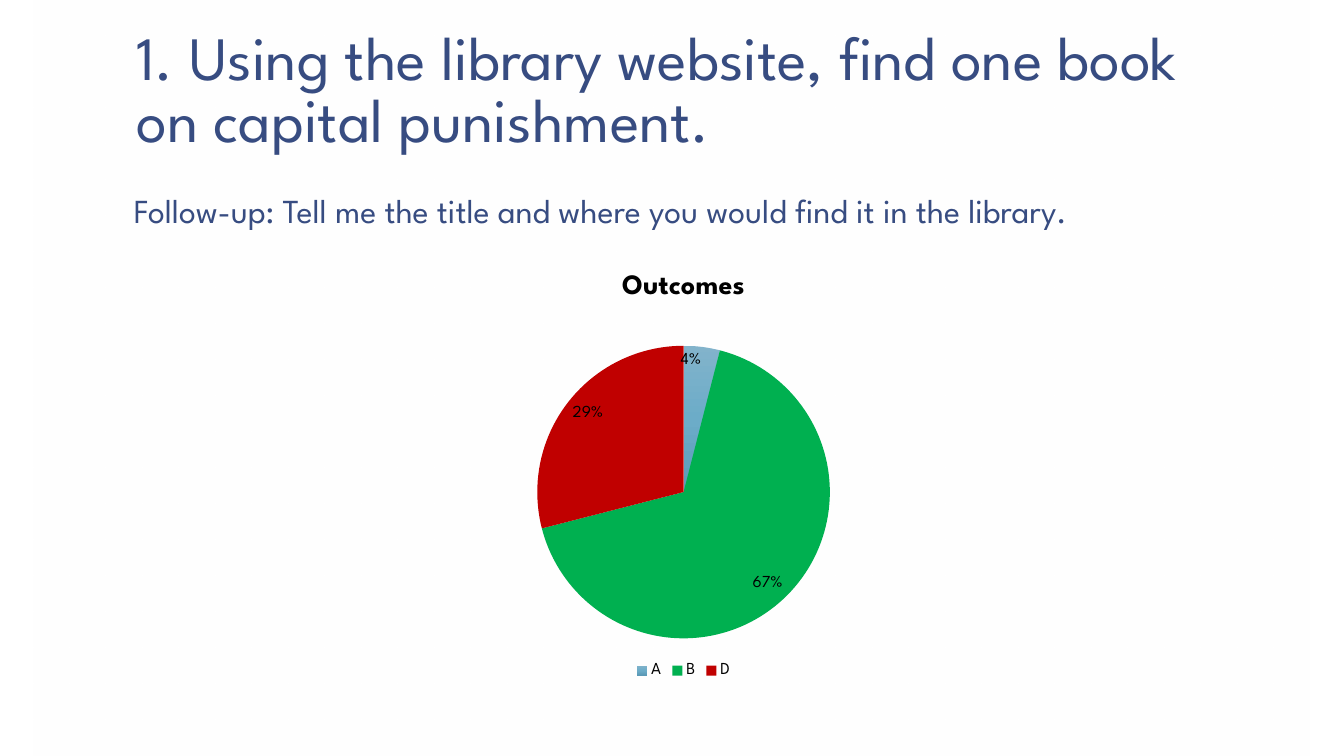
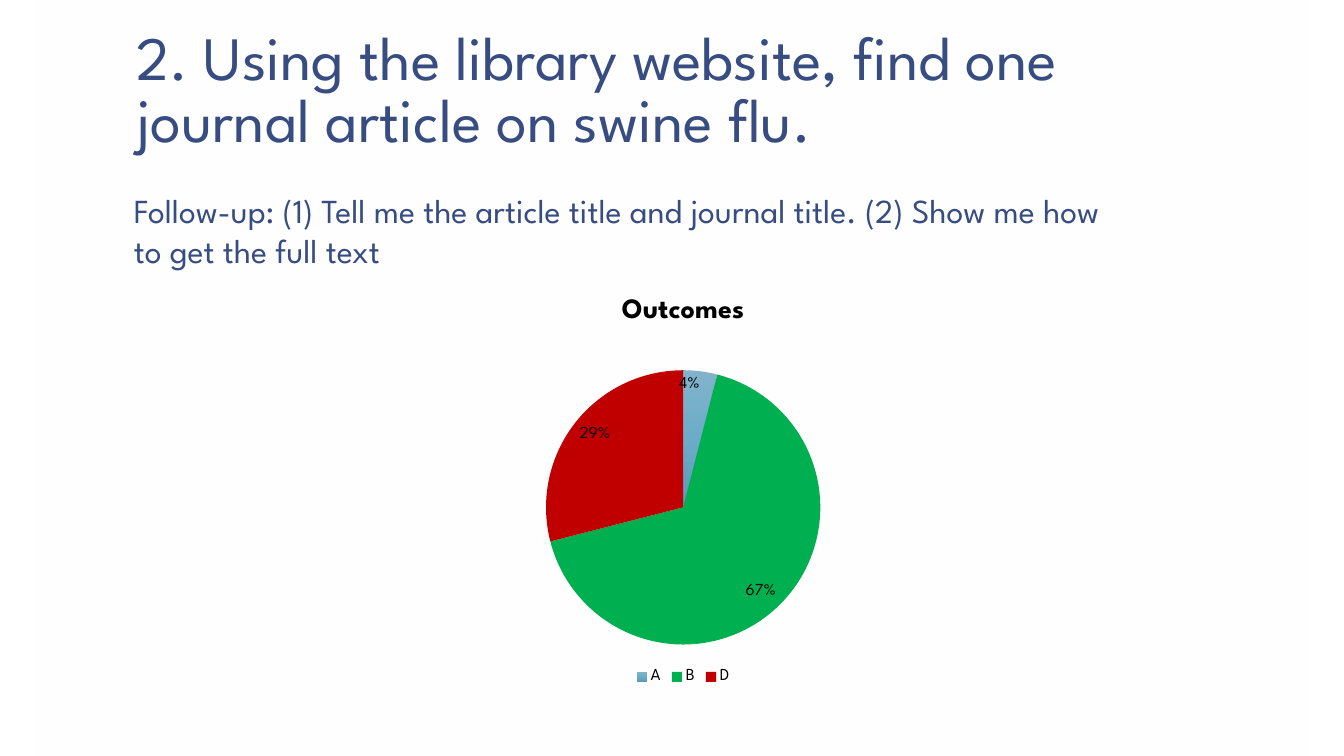
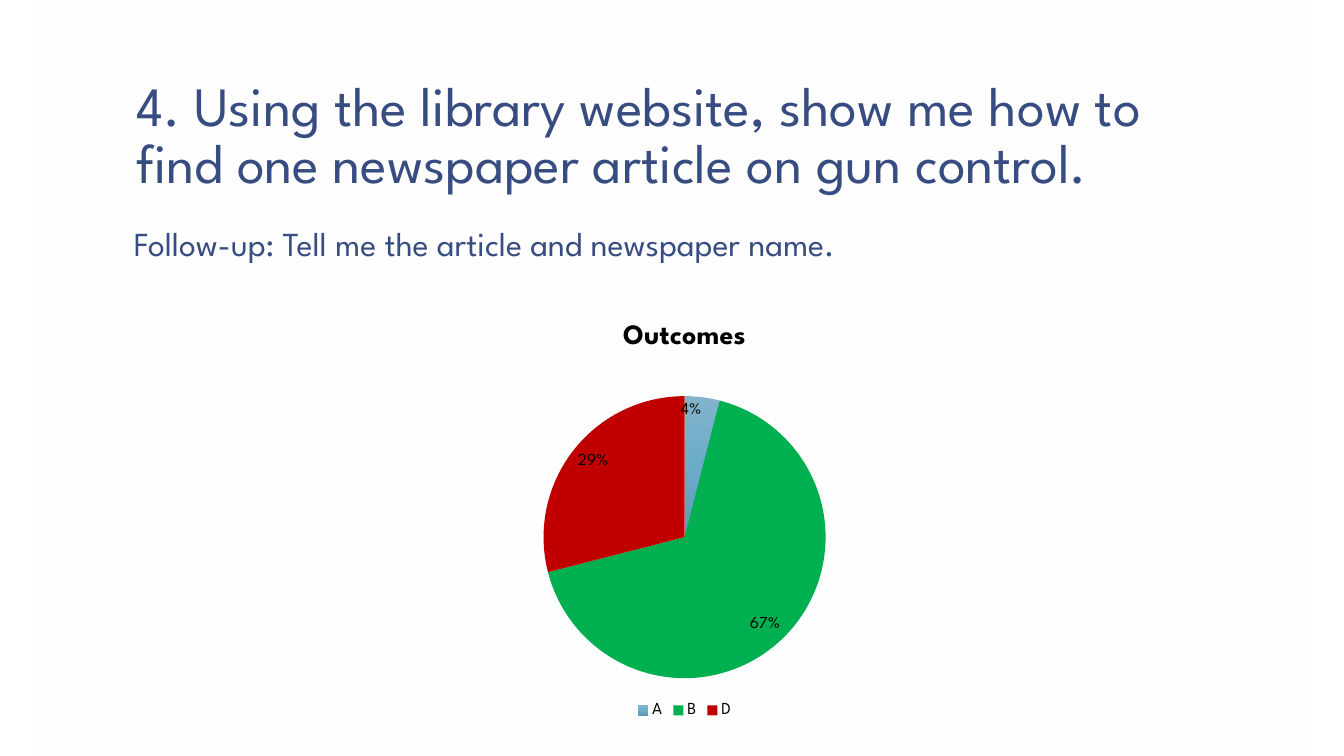
from dataclasses import dataclass

from pptx import Presentation
from pptx.chart.data import CategoryChartData
from pptx.dml.color import RGBColor
from pptx.enum.chart import XL_CHART_TYPE, XL_LABEL_POSITION, XL_LEGEND_POSITION
from pptx.enum.shapes import MSO_SHAPE
from pptx.enum.text import MSO_ANCHOR, MSO_AUTO_SIZE
from pptx.oxml import parse_xml
from pptx.oxml.ns import nsdecls
from pptx.util import Pt


@dataclass(frozen=True)
class Theme:
    font: str = "League Spartan"
    text: str = "374C81"
    chart_text: str = "000000"
    panel_stops: tuple = ((0, "FFFFFF", 100), (100, "FFFFFF", 45))
    slice_stops: tuple = ((0, "82B3CB", 100), (50, "6CACC8", 100), (100, "5B9AB7", 100))
    slice_colors: tuple = ("00B050", "C00000")
    title_size: float = 44
    follow_up_size: float = 24
    chart_title_size: float = 20
    label_size: float = 12
    line_spacing: float = 0.85


class Deck:
    def __init__(self, theme):
        self.theme = theme
        self.presentation = Presentation()
        self.presentation.slide_width = Pt(960)
        self.presentation.slide_height = Pt(540)
        self.slide = None

    def add_slide(self):
        self.slide = self.presentation.slides.add_slide(self.presentation.slide_layouts[6])
        self.add_panel()

    def add_panel(self):
        panel = self.slide.shapes.add_shape(MSO_SHAPE.RECTANGLE, Pt(24), Pt(0), Pt(911.5), Pt(540))
        panel.shadow.inherit = False
        panel.line.fill.background()
        self.set_gradient(panel.fill, panel._element, self.theme.panel_stops, 130)

    def set_gradient(self, fill, element, stops, clockwise_angle):
        fill.gradient()
        fill.gradient_angle = 360 - clockwise_angle
        stop_list = element.xpath(".//a:gsLst")[0]
        for stop in list(stop_list):
            stop_list.remove(stop)
        for position, color, opacity in stops:
            stop_list.append(parse_xml(
                f'<a:gs {nsdecls("a")} pos="{position * 1000}"><a:srgbClr val="{color}">'
                f'<a:alpha val="{opacity * 1000}"/></a:srgbClr></a:gs>'))

    def style_font(self, font, size, color, bold=False):
        font.name = self.theme.font
        font.size = Pt(size)
        font.bold = bold
        font.color.rgb = RGBColor.from_string(color)

    def add_text(self, text, left, top, width, height, size):
        shape = self.slide.shapes.add_textbox(Pt(left), Pt(top), Pt(width), Pt(height))
        shape.text_frame.text = text
        for paragraph in shape.text_frame.paragraphs:
            for run in paragraph.runs:
                self.style_font(run.font, size, self.theme.text)
        return shape.text_frame

    def add_title(self, text, top, size):
        text_frame = self.add_text(text, 88, top, 800, 110, size)
        text_frame.word_wrap = True
        text_frame.vertical_anchor = MSO_ANCHOR.BOTTOM
        text_frame.margin_left = text_frame.margin_right = Pt(9.4)
        text_frame.margin_top = text_frame.margin_bottom = Pt(5)
        text_frame.paragraphs[0].line_spacing = self.theme.line_spacing

    def add_follow_up(self, text, top, width):
        height = 36.4 + 29 * text.count("\n")
        text_frame = self.add_text(text, 88.5, top, width, height, self.theme.follow_up_size)
        text_frame.word_wrap = False
        text_frame.auto_size = MSO_AUTO_SIZE.SHAPE_TO_FIT_TEXT

    def add_outcomes(self, values, left, top, width, height):
        theme = self.theme
        data = CategoryChartData()
        data.categories = list(values)
        data.add_series("Series 1", list(values.values()))
        chart = self.slide.shapes.add_chart(
            XL_CHART_TYPE.PIE, Pt(left), Pt(top), Pt(width), Pt(height), data).chart
        self.style_font(chart.font, 10, theme.text)

        chart.has_title = True
        chart.chart_title.text_frame.text = "Outcomes"
        title_run = chart.chart_title.text_frame.paragraphs[0].runs[0]
        self.style_font(title_run.font, theme.chart_title_size, theme.chart_text, bold=True)
        chart.chart_title.include_in_layout = False

        chart.has_legend = True
        chart.legend.position = XL_LEGEND_POSITION.BOTTOM
        chart.legend.include_in_layout = False
        self.style_font(chart.legend.font, theme.label_size, theme.chart_text)

        plot = chart.plots[0]
        plot.vary_by_categories = True
        plot.has_data_labels = True
        labels = plot.data_labels
        labels.show_percentage = True
        labels.show_value = False
        labels.number_format = "0%"
        labels.number_format_is_linked = False
        labels.position = XL_LABEL_POSITION.INSIDE_END
        self.style_font(labels.font, theme.label_size, theme.chart_text)

        points = plot.series[0].points
        self.set_gradient(points[0].format.fill, chart._chartSpace, theme.slice_stops, 90)
        for index, color in enumerate(theme.slice_colors, start=1):
            fill = points[index].format.fill
            fill.solid()
            fill.fore_color.rgb = RGBColor.from_string(color)
        self.place_pie(chart, width, height)

    def place_pie(self, chart, width, height):
        title_space, legend_space = 67, 31.5
        diameter = height - title_space - legend_space
        plot_area = chart._chartSpace.xpath(".//c:plotArea")[0]
        for layout in plot_area.xpath("./c:layout"):
            plot_area.remove(layout)
        fractions = {
            "x": (width - diameter) / 2 / width,
            "y": title_space / height,
            "w": diameter / width,
            "h": diameter / height,
        }
        sizes = "".join(f'<c:{name} val="{value:.4f}"/>' for name, value in fractions.items())
        plot_area.insert(0, parse_xml(
            f'<c:layout {nsdecls("c")}><c:manualLayout><c:layoutTarget val="inner"/>'
            f'<c:xMode val="edge"/><c:yMode val="edge"/>{sizes}</c:manualLayout></c:layout>'))


def main():
    theme = Theme()
    deck = Deck(theme)
    outcomes = {"A": 4, "B": 67, "D": 29}
    tasks = [
        ("1. Using the library website, find one book on capital punishment.",
         6, theme.title_size,
         "Follow-up: Tell me the title and where you would find it in the library.",
         132, 799, (301, 180, 374.5, 307.5)),
        ("2. Using the library website, find one journal article on swine flu.",
         6, theme.title_size,
         "Follow-up: (1) Tell me the article title and journal title. (2) Show me how\n"
         "to get the full text",
         132, 839, (278, 197.5, 420, 294.5)),
        ("4. Using the library website, show me how to find one newspaper article on gun control.",
         34, theme.title_size * 0.9,
         "Follow-up: Tell me the article and newspaper name.",
         156, 624, (266.5, 216, 445, 300)),
    ]
    for title, title_top, title_size, follow_up, follow_up_top, follow_up_width, chart_box in tasks:
        deck.add_slide()
        deck.add_title(title, title_top, title_size)
        deck.add_follow_up(follow_up, follow_up_top, follow_up_width)
        deck.add_outcomes(outcomes, *chart_box)
    deck.presentation.save("out.pptx")


if __name__ == "__main__":
    main()
